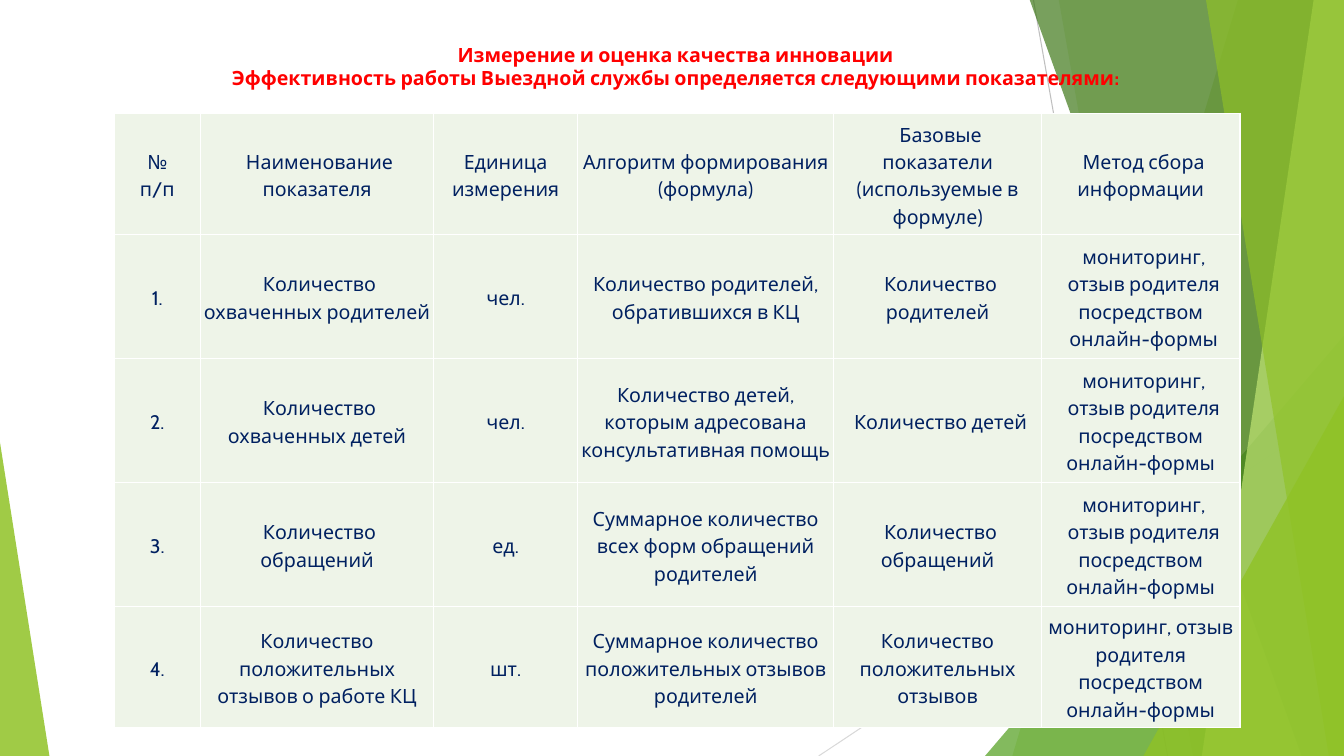
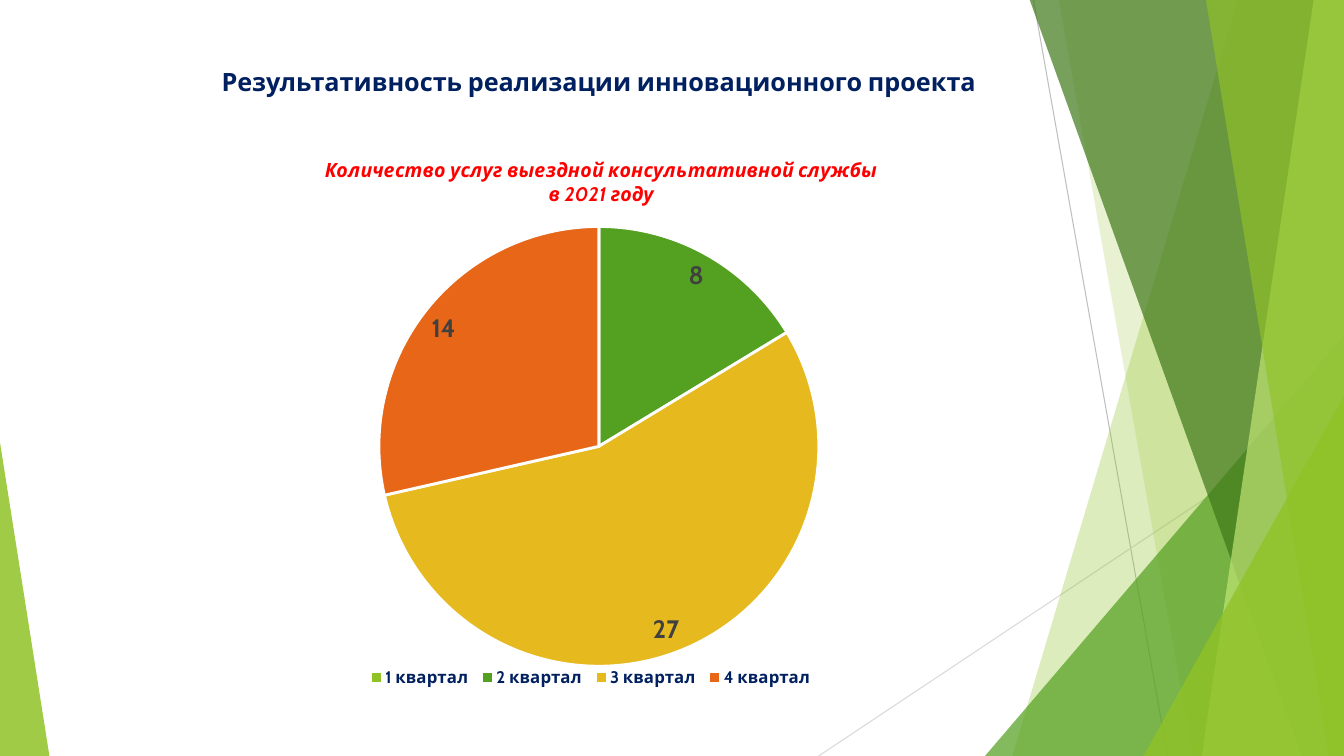
from dataclasses import dataclass
from lxml import etree
from pptx import Presentation
from pptx.chart.data import CategoryChartData
from pptx.dml.color import RGBColor
from pptx.enum.chart import XL_CHART_TYPE as CT, XL_LABEL_POSITION as LP, XL_LEGEND_POSITION as LEG
from pptx.enum.shapes import MSO_CONNECTOR, MSO_SHAPE
from pptx.enum.text import MSO_ANCHOR, MSO_AUTO_SIZE, PP_ALIGN
from pptx.oxml import parse_xml
from pptx.oxml.ns import nsdecls, qn
from pptx.util import Inches, Pt


@dataclass(frozen=True)
class Theme:
    font: str = "Cabin"
    navy: str = "002060"
    red: str = "FF0000"
    white: str = "FFFFFF"
    label: str = "404040"
    cell: str = "EEF4E8"
    lime: str = "90C226"
    green: str = "54A021"
    forest: str = "3F7819"
    pale: str = "C0E474"
    yellow: str = "E6B91E"
    orange: str = "E76618"
    body: int = 14
    heading: int = 18
    legend: int = 12


T = Theme()
W, H = 13.33, 7.5
TOP = -0.01

COLUMNS = [0.86, 2.31, 1.43, 2.54, 2.06, 1.97]
ROWS = [1.2, 1.23, 1.23, 1.23, 1.2]
INDENTS = {1: 0.05, 4: 0.06, 5: 0.06}  # first-line indent by column
SURVEY = "мониторинг,\nотзыв родителя посредством онлайн-формы"
INDICATORS = [
    ["№\nп/п", "Наименование показателя", "Единица измерения",
     "Алгоритм формирования (формула)",
     "Базовые показатели (используемые в формуле)", "Метод сбора информации"],
    ["1.", "Количество охваченных родителей", "чел.",
     "Количество родителей, обратившихся в КЦ", "Количество родителей",
     "мониторинг,\nотзыв родителя посредством\nонлайн-формы"],
    ["2.", "Количество охваченных детей", "чел.",
     "Количество детей, которым адресована консультативная помощь",
     "Количество детей", SURVEY],
    ["3.", "Количество обращений", "ед.",
     "Суммарное количество всех форм обращений родителей",
     "Количество обращений", SURVEY],
    ["4.", "Количество положительных отзывов о работе КЦ", "шт.",
     "Суммарное количество положительных отзывов родителей",
     "Количество положительных отзывов",
     "мониторинг, отзыв родителя посредством онлайн-формы"],
]
QUARTERS = {"1 квартал": (0, T.lime), "2 квартал": (8, T.green),
            "3 квартал": (27, T.yellow), "4 квартал": (14, T.orange)}


def rgb(color):
    return RGBColor.from_string(color)


def set_font(font, size, color, bold=False, italic=False):
    font.name, font.size, font.bold, font.italic = T.font, Pt(size), bold, italic
    font.color.rgb = rgb(color)


def write(tf, text, size, color, bold=False, italic=False, indent=0, spacing=None):
    """Fill a text frame with centred paragraphs, one per line of text."""
    for i, line in enumerate(text.split("\n")):
        p = tf.add_paragraph() if i else tf.paragraphs[0]
        p.add_run().text = line
        p.alignment = PP_ALIGN.CENTER
        set_font(p.font, size, color, bold, italic)
        if spacing:
            p.line_spacing = spacing
        if indent:
            p._p.get_or_add_pPr().set("indent", str(Inches(indent)))


# Shared background
def tint(sp, color, alpha):
    sp.shadow.inherit = False
    sp.line.fill.background()
    sp.fill.solid()
    sp.fill.fore_color.rgb = rgb(color)
    clr = sp.element.spPr.find(qn("a:solidFill"))[0]
    etree.SubElement(clr, qn("a:alpha")).set("val", str(alpha * 1000))
    return sp


def add_hairline(shapes, x1, y1, x2, y2, color):
    line = shapes.add_connector(MSO_CONNECTOR.STRAIGHT, *map(Inches, (x1, y1, x2, y2)))
    line.line.color.rgb = rgb(color)
    line.line.width = Pt(0.75)
    etree.SubElement(line.element.spPr, qn("a:effectLst"))
    return line


def add_band(shapes, top_x, bottom_x, color, alpha):
    """Band from a slanted left edge to the right side of the slide."""
    builder = shapes.build_freeform(Inches(top_x), Inches(TOP))
    corners = [(W, TOP), (W, H), (bottom_x, H)]
    builder.add_line_segments([(Inches(x), Inches(y)) for x, y in corners], close=True)
    return tint(builder.convert_to_shape(), color, alpha)


def add_corner(shapes, x, y, width, apex, color, alpha):
    """Right-angled triangle standing on the bottom edge."""
    sp = shapes.add_shape(MSO_SHAPE.ISOSCELES_TRIANGLE,
                          *map(Inches, (x, y, width, H - y)))
    sp.adjustments[0] = apex
    return tint(sp, color, alpha)


def decorate_layout(layout, slide):
    """Draw the facets with the slide's shape tools, then move them to the layout."""
    shapes = slide.shapes
    facets = [
        add_hairline(shapes, 10.25, 0, 11.58, H, "BFBFBF"),
        add_hairline(shapes, W, 4.03, 8.12, H, "D9D9D9"),
        add_band(shapes, 12.28, 10.04, T.lime, 30),
        add_band(shapes, 10.5, 11.83, T.lime, 20),
        add_corner(shapes, 9.77, 3.33, 3.56, 1, T.green, 72),
        add_band(shapes, 10.21, 12.91, T.forest, 70),
        add_band(shapes, 13.03, 11.92, T.pale, 70),
        add_band(shapes, 11.96, 13.18, T.lime, 65),
        add_corner(shapes, 11.34, 3.93, 1.99, 1, T.lime, 80),
        add_corner(shapes, 0, 4.39, 0.49, 0, T.lime, 85),
    ]
    for number, facet in enumerate(facets, start=101):
        facet.element.xpath(".//p:cNvPr")[0].set("id", str(number))
        layout.element.cSld.spTree.append(facet.element)


# Slide parts
def set_title(slide, text, box, size, color, indent=0):
    title = slide.shapes.title
    title.left, title.top, title.width, title.height = map(Inches, box)
    tf = title.text_frame
    tf.word_wrap = True
    tf.auto_size = MSO_AUTO_SIZE.NONE
    tf.vertical_anchor = MSO_ANCHOR.MIDDLE
    write(tf, text, size, color, bold=True, indent=indent)


def format_cell(cell, text, indent):
    cell.margin_left = cell.margin_right = Inches(0.03)
    cell.margin_top = cell.margin_bottom = Inches(0.05)
    cell.vertical_anchor = MSO_ANCHOR.MIDDLE
    write(cell.text_frame, text, T.body, T.navy, indent=indent, spacing=1.15)
    tcPr = cell._tc.get_or_add_tcPr()
    for side in ("lnL", "lnR", "lnT", "lnB"):
        tcPr.append(parse_xml(
            f'<a:{side} {nsdecls("a")} w="{Pt(1)}"><a:solidFill>'
            f'<a:srgbClr val="{T.white}"/></a:solidFill></a:{side}>'))
    cell.fill.solid()
    cell.fill.fore_color.rgb = rgb(T.cell)


def add_indicator_table(slide, x, y):
    table = slide.shapes.add_table(
        len(ROWS), len(COLUMNS),
        *map(Inches, (x, y, sum(COLUMNS), sum(ROWS)))).table
    table.first_row = table.horz_banding = False
    for column, width in zip(table.columns, COLUMNS):
        column.width = Inches(width)
    for row, height in zip(table.rows, ROWS):
        row.height = Inches(height)
    for r, texts in enumerate(INDICATORS):
        for c, text in enumerate(texts):
            last = r == len(INDICATORS) - 1
            format_cell(table.cell(r, c), text, 0 if last else INDENTS.get(c, 0))


def place(element, before, inner=False, **fractions):
    """Give a chart part a manual layout in fractions of the chart."""
    for old in element.findall(qn("c:layout")):
        element.remove(old)
    target = '<c:layoutTarget val="inner"/>' if inner else ""
    modes = '<c:xMode val="edge"/><c:yMode val="edge"/>'
    values = "".join(f'<c:{k} val="{v}"/>' for k, v in fractions.items())
    layout = parse_xml(f'<c:layout {nsdecls("c")}><c:manualLayout>{target}{modes}'
                       f'{values}</c:manualLayout></c:layout>')
    successor = next((e for e in element if e.tag in map(qn, before)), None)
    if successor is None:
        element.append(layout)
    else:
        successor.addprevious(layout)


def add_quarter_pie(slide, box, title):
    data = CategoryChartData()
    data.categories = list(QUARTERS)
    data.add_series("Series 1", [value for value, _ in QUARTERS.values()])
    chart = slide.shapes.add_chart(CT.PIE, *map(Inches, box), data).chart
    chart.font.name, chart.font.size = T.font, Pt(10)

    # Title and legend
    chart.has_title = True
    write(chart.chart_title.text_frame, title, T.body, T.red, bold=True, italic=True)
    chart.chart_title.include_in_layout = False
    chart.has_legend = True
    chart.legend.position = LEG.BOTTOM
    chart.legend.include_in_layout = False
    set_font(chart.legend.font, T.legend, T.navy, bold=True)

    # Slices and values; the number format leaves a zero blank
    plot = chart.plots[0]
    plot.vary_by_categories = True
    for i, (_, color) in enumerate(QUARTERS.values()):
        fmt = plot.series[0].points[i].format
        fmt.fill.solid()
        fmt.fill.fore_color.rgb = rgb(color)
        fmt.line.color.rgb = rgb(T.white)
        fmt.line.width = Pt(2)
    plot.has_data_labels = True
    labels = plot.data_labels
    labels.show_value = True
    labels.number_format, labels.number_format_is_linked = "#", False
    labels.position = LP.INSIDE_END
    set_font(labels.font, T.heading, T.label, bold=True)

    # Positions inside the chart
    area = chart.element.chart
    place(area.find(qn("c:title")), ["c:overlay"], x=0.16, y=0.03)
    place(area.plotArea, ["c:pieChart"], inner=True, x=0.23, y=0.15, w=0.54, h=0.76)
    place(area.find(qn("c:legend")), ["c:overlay"], x=0.21, y=0.9, w=0.56, h=0.05)


def main():
    prs = Presentation()
    prs.slide_width, prs.slide_height = Inches(W), Inches(H)
    layout = prs.slide_layouts[5]

    # Indicators
    s = prs.slides.add_slide(layout)
    decorate_layout(layout, s)
    set_title(s, "Измерение и оценка качества инновации\n"
              "Эффективность работы Выездной службы определяется следующими показателями:",
              (1.61, 0.37, 10.12, 0.57), T.body, T.red, indent=0.06)
    add_indicator_table(s, 1.13, 1.13)

    # Results
    s = prs.slides.add_slide(layout)
    set_title(s, "Результативность реализации инновационного проекта",
              (1.44, 0.61, 9, 0.4), T.heading, T.navy)
    add_quarter_pie(s, (1.9, 1.35, 8.08, 5.81),
                    "Количество услуг выездной консультативной службы\nв 2021 году")

    prs.save("out.pptx")


if __name__ == "__main__":
    main()
